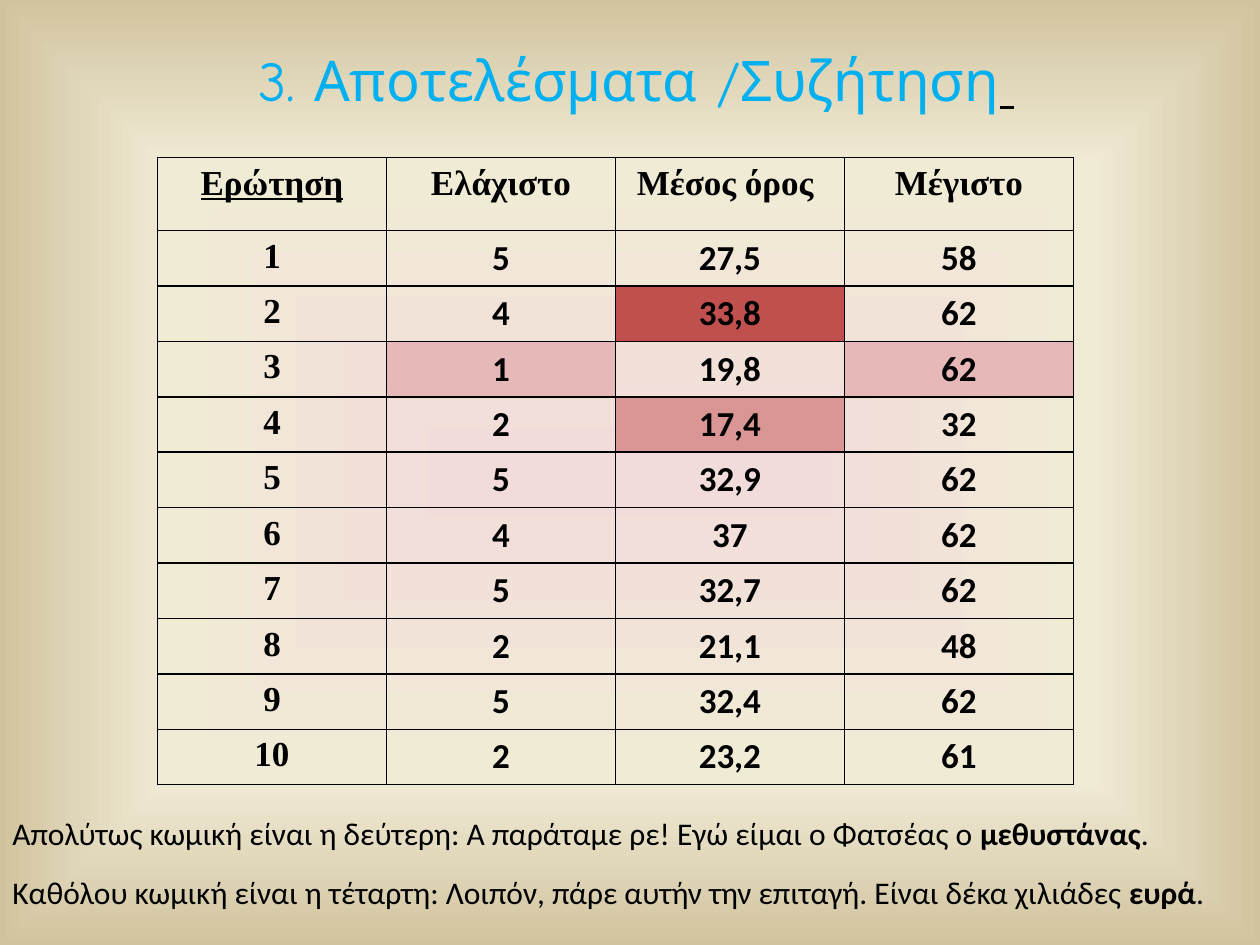
from pptx import Presentation, util as u
from pptx.dml.color import RGBColor
from pptx.enum import text
from pptx.oxml import parse_xml
from pptx.oxml.ns import nsdecls

SERIF, SANS = "Times New Roman", "Calibri"
MID = text.PP_ALIGN.CENTER
HEADS = ["Ερώτηση", "Ελάχιστο", " Μέσος όρος", "Μέγιστο"]
DATA = [
    ("5", "27,5", "58"), ("4", "33,8", "62"), ("1", "19,8", "62"),
    ("2", "17,4", "32"), ("5", "32,9", "62"), ("4", "37", "62"),
    ("5", "32,7", "62"), ("2", "21,1", "48"), ("5", "32,4", "62"),
    ("2", "23,2", "61"),
]
FILLS = {(2, 2): "C0504D", (3, 1): "E6B9B8", (3, 3): "E6B9B8", (4, 2): "D99694"}
STOPS = [(0, "F2DCDB"), (65, "F0EBD5"), (100, "D1C39F")]


def tint(code):
    """Turn a hex string into a colour."""
    return RGBColor.from_string(code)


def style(run, size, face, code="000000", bold=False, line=False):
    """Format one run."""
    font = run.font
    font.size, font.name = u.Pt(size), face
    font.bold, font.underline = bold, line
    font.color.rgb = tint(code)


def back(slide):
    """Give the slide a gradient that spreads from its centre."""
    stops = "".join(
        f'<a:gs pos="{pos * 1000}"><a:srgbClr val="{code}"/></a:gs>'
        for pos, code in STOPS)
    slide.element.cSld.insert(0, parse_xml(
        f'<p:bg {nsdecls("p", "a")}><p:bgPr><a:gradFill rotWithShape="1">'
        f'<a:gsLst>{stops}</a:gsLst><a:path path="shape"><a:fillToRect '
        'l="50000" t="50000" r="50000" b="50000"/></a:path></a:gradFill>'
        '<a:effectLst/></p:bgPr></p:bg>'))


def panel(slide, box):
    """Add a wrapping text box and return its frame."""
    frame = slide.shapes.add_textbox(*map(u.Inches, box)).text_frame
    frame.word_wrap = True
    return frame


def title(slide, box):
    """Write the centred heading."""
    frame = panel(slide, box)
    frame.vertical_anchor = text.MSO_ANCHOR.MIDDLE
    para = frame.paragraphs[0]
    para.alignment = MID
    head, tail = para.add_run(), para.add_run()
    head.text, tail.text = "3. Αποτελέσματα /Συζήτηση", " "
    style(head, 32, "Comic Neue", "00B0F0")
    style(tail, 32, SERIF, line=True)


def edge(cell):
    """Draw thin black borders round a cell."""
    props = cell._tc.get_or_add_tcPr()
    for spot, side in enumerate(("lnL", "lnR", "lnT", "lnB")):
        props.insert(spot, parse_xml(
            f'<a:{side} {nsdecls("a")} w="12700"><a:solidFill>'
            f'<a:srgbClr val="000000"/></a:solidFill></a:{side}>'))


def grid(slide, box):
    """Build the table of scores for each question."""
    rows = [HEADS] + [(str(num), *vals) for num, vals in enumerate(DATA, 1)]
    shape = slide.shapes.add_table(len(rows), len(HEADS), *map(u.Inches, box))
    table = shape.table
    table.first_row = table.horz_banding = False
    top = 0.58
    for col in table.columns:
        col.width = u.Inches(box[2] / len(HEADS))
    for num, row in enumerate(table.rows):
        row.height = u.Inches((box[3] - top) / len(DATA) if num else top)
    for r, vals in enumerate(rows):
        for c, val in enumerate(vals):
            cell = table.cell(r, c)
            if (r, c) in FILLS:
                cell.fill.solid()
                cell.fill.fore_color.rgb = tint(FILLS[r, c])
            else:
                cell.fill.background()
            edge(cell)
            para = cell.text_frame.paragraphs[0]
            para.text = val
            para.alignment = text.PP_ALIGN.LEFT if (r, c) == (0, 2) else MID
            face = SANS if r and c else SERIF
            style(para.runs[0], 20, face, bold=True, line=r == c == 0)


def note(slide, box, lead, key):
    """Write a remark that ends in a bold word."""
    para = panel(slide, box).paragraphs[0]
    for part in (lead, key, "."):
        run = para.add_run()
        run.text = part
        style(run, 18, SANS, bold=part == key)


def main():
    """Build and save the slide."""
    deck = Presentation()
    deck.slide_width, deck.slide_height = u.Inches(10), u.Inches(7.5)
    slide = deck.slides.add_slide(deck.slide_layouts[6])
    back(slide)
    title(slide, (0.55, 0, 9, 1.25))
    grid(slide, (1.25, 1.25, 7.27, 4.98))
    note(slide, (0, 6.41, 9.61, 0.4),
         "Απολύτως κωμική είναι η δεύτερη: Α παράταμε ρε! "
         "Εγώ είμαι ο Φατσέας ο ", "μεθυστάνας")
    note(slide, (0, 6.88, 10, 0.4),
         "Καθόλου κωμική είναι η τέταρτη: Λοιπόν, πάρε αυτήν την επιταγή. "
         "Είναι δέκα χιλιάδες ", "ευρά")
    deck.save("out.pptx")


if __name__ == "__main__":
    main()
